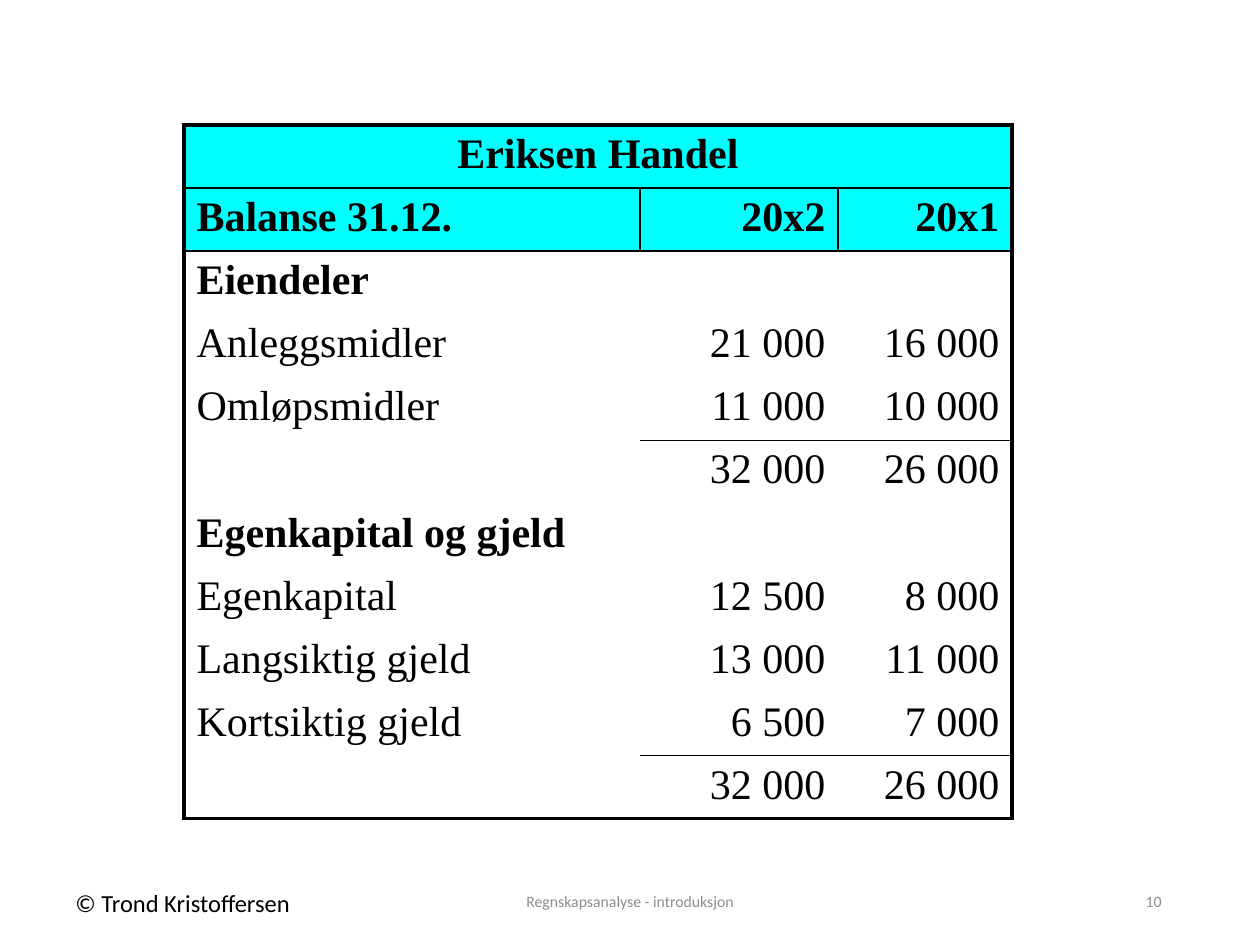
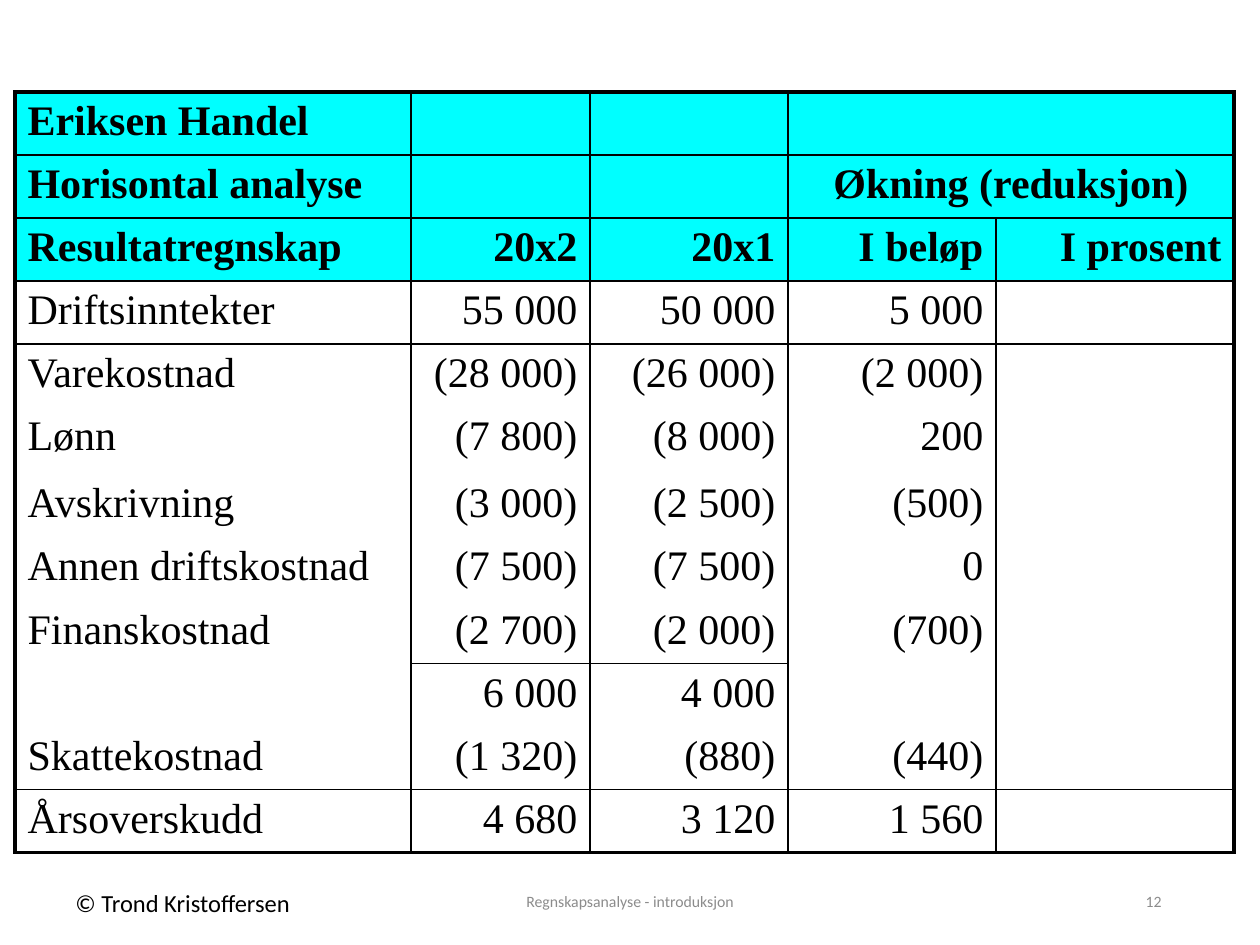
from lxml.etree import SubElement
from pptx import Presentation
from pptx.dml.color import RGBColor
from pptx.enum.text import MSO_ANCHOR, PP_ALIGN
from pptx.oxml.ns import qn
from pptx.util import Pt

EMU_PER_PX = 914400 / 126
BLACK, GREY, CYAN = "000000", "8C8C8C", "00FFFF"
OUTER, INNER, NO_LINE = 2.25, 1, 0
LEFT, CENTER, RIGHT = PP_ALIGN.LEFT, PP_ALIGN.CENTER, PP_ALIGN.RIGHT


def px(length):
    return round(length * EMU_PER_PX)


def style(paragraph, font, size, color, align, bold=False):
    paragraph.alignment = align
    paragraph.font.name = font
    paragraph.font.size = Pt(size)
    paragraph.font.bold = bold
    paragraph.font.color.rgb = RGBColor.from_string(color)


# merged: (row, first column, last column)
# rules_below: row -> columns with a thin line beneath
# divided_rows: rows with thin lines between their columns
balance_sheet = {
    "page": "10", "left": 184, "top": 125,
    "columns": [456, 198, 174], "heights": [63] * 11,
    "header_rows": 2, "merged": [(0, 0, 2)],
    "rules_below": {0: range(3), 1: range(3), 4: (1, 2), 9: (1, 2)},
    "divided_rows": [1],
    "rows": [
        ["Eriksen Handel", "", ""],
        ["Balanse 31.12.", "20x2", "20x1"],
        ["Eiendeler", "", ""],
        ["Anleggsmidler", "21 000", "16 000"],
        ["Omløpsmidler", "11 000", "10 000"],
        ["", "32 000", "26 000"],
        ["Egenkapital og gjeld", "", ""],
        ["Egenkapital", "12 500", "8 000"],
        ["Langsiktig gjeld", "13 000", "11 000"],
        ["Kortsiktig gjeld", "6 500", "7 000"],
        ["", "32 000", "26 000"],
    ],
}
income_statement = {
    "page": "12", "left": 15, "top": 92,
    "columns": [396, 179, 198, 208, 238],
    "heights": [63] * 5 + [67] + [63] * 6,
    "header_rows": 3, "merged": [(0, 3, 4), (1, 3, 4)],
    "rules_below": {0: range(5), 1: range(5), 2: range(5), 3: range(5),
                    8: (1, 2), 10: range(5)},
    "divided_rows": range(12),
    "rows": [
        ["Eriksen Handel", "", "", "", ""],
        ["Horisontal analyse", "", "", "Økning (reduksjon)", ""],
        ["Resultatregnskap", "20x2", "20x1", "I beløp", "I prosent"],
        ["Driftsinntekter", "55 000", "50 000", "5 000", ""],
        ["Varekostnad", "(28 000)", "(26 000)", "(2 000)", ""],
        ["Lønn", "(7 800)", "(8 000)", "200", ""],
        ["Avskrivning", "(3 000)", "(2 500)", "(500)", ""],
        ["Annen driftskostnad", "(7 500)", "(7 500)", "0", ""],
        ["Finanskostnad", "(2 700)", "(2 000)", "(700)", ""],
        ["", "6 000", "4 000", "", ""],
        ["Skattekostnad", "(1 320)", "(880)", "(440)", ""],
        ["Årsoverskudd", "4 680", "3 120", "1 560", ""],
    ],
}

prs = Presentation()
prs.slide_width, prs.slide_height = px(1260), px(945)

for statement in (balance_sheet, income_statement):
    slide = prs.slides.add_slide(prs.slide_layouts[6])

    for text, box, size, color, align, anchor, wrap in (
        ("© Trond Kristoffersen", (63, 882, 246, 42), 14, BLACK, LEFT, MSO_ANCHOR.TOP, False),
        ("Regnskapsanalyse - introduksjon", (417, 876, 426, 50), 9, GREY, CENTER, MSO_ANCHOR.MIDDLE, True),
        (statement["page"], (890, 876, 284, 50), 9, GREY, RIGHT, MSO_ANCHOR.MIDDLE, True),
    ):
        footer = slide.shapes.add_textbox(*map(px, box)).text_frame
        footer.word_wrap = wrap
        footer.vertical_anchor = anchor
        footer.text = text
        style(footer.paragraphs[0], "Calibri", size, color, align)

    rows, widths, heights = statement["rows"], statement["columns"], statement["heights"]
    table = slide.shapes.add_table(
        len(rows), len(widths), px(statement["left"]), px(statement["top"]),
        px(sum(widths)), px(sum(heights))).table
    table.first_row = table.horz_banding = False
    for column, width in zip(table.columns, widths):
        column.width = px(width)
    for row, height in zip(table.rows, heights):
        row.height = px(height)
    for r, first, last in statement["merged"]:
        table.cell(r, first).merge(table.cell(r, last))

    rules_below = statement["rules_below"]
    for r, values in enumerate(rows):
        is_header = r < statement["header_rows"]
        is_heading = is_header or not any(values[1:])
        divider = INNER if r in statement["divided_rows"] else NO_LINE
        for c, value in enumerate(values):
            cell = table.cell(r, c)
            borders = {
                "a:lnL": OUTER if c == 0 else NO_LINE if cell.is_spanned else divider,
                "a:lnR": OUTER if c + cell.span_width >= len(widths) else divider,
                "a:lnT": OUTER if r == 0 else INNER if c in rules_below.get(r - 1, ()) else NO_LINE,
                "a:lnB": OUTER if r == len(rows) - 1 else INNER if c in rules_below.get(r, ()) else NO_LINE,
            }
            properties = cell._tc.get_or_add_tcPr()
            for side, width in borders.items():
                line = SubElement(properties, qn(side), w=str(Pt(width)))
                if width:
                    fill = SubElement(line, qn("a:solidFill"))
                    SubElement(fill, qn("a:srgbClr"), val=BLACK)
                else:
                    SubElement(line, qn("a:noFill"))
            if is_header:
                cell.fill.solid()
                cell.fill.fore_color.rgb = RGBColor.from_string(CYAN)
            else:
                cell.fill.background()
            cell.text = value
            align = CENTER if cell.is_merge_origin else RIGHT if c else LEFT
            style(cell.text_frame.paragraphs[0], "Times New Roman", 24, BLACK, align, is_heading)

prs.save("out.pptx")
